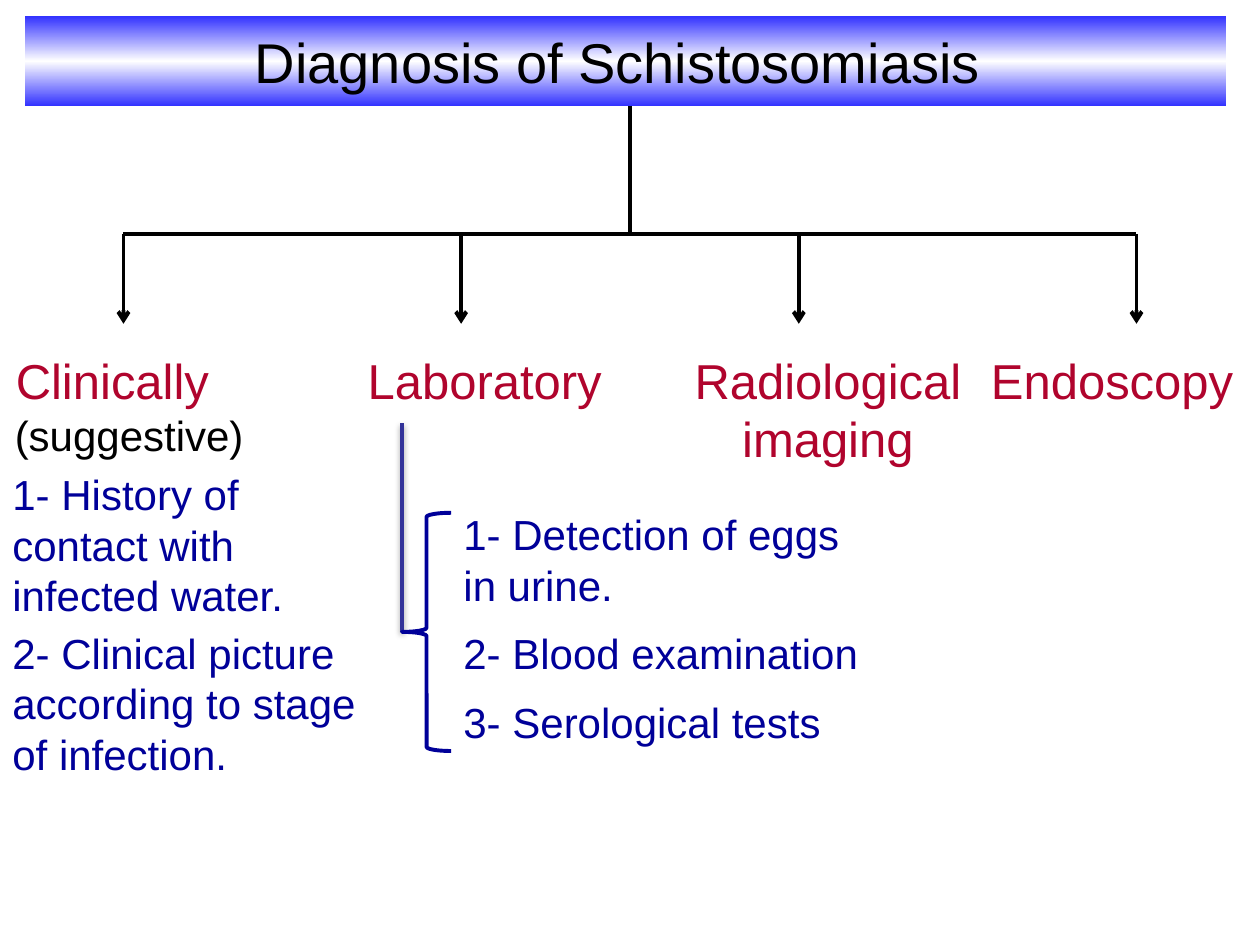
from copy import deepcopy
from dataclasses import dataclass

from pptx import Presentation
from pptx.dml.color import RGBColor
from pptx.enum.shapes import MSO_CONNECTOR, MSO_SHAPE
from pptx.enum.text import MSO_ANCHOR, MSO_AUTO_SIZE, PP_ALIGN
from pptx.oxml import parse_xml
from pptx.oxml.ns import nsdecls, qn
from pptx.util import Inches, Pt

BLACK = RGBColor(0x00, 0x00, 0x00)
WHITE = RGBColor(0xFF, 0xFF, 0xFF)
BAND_BLUE = RGBColor(0x33, 0x33, 0xFF)
RED = RGBColor(0xB0, 0x04, 0x2D)
NAVY = RGBColor(0x00, 0x00, 0x99)
INDIGO = RGBColor(0x33, 0x33, 0x99)

HEADING = {"size": Pt(28), "color": RED, "align": PP_ALIGN.CENTER}
NOTE = {"size": Pt(24), "color": BLACK, "align": PP_ALIGN.CENTER}
DETAIL = {"size": Pt(24), "color": NAVY, "align": PP_ALIGN.LEFT}

TRUNK_X, TITLE_BOTTOM, BAR_Y, ARROW_Y = 5, 0.84, 1.86, 2.57
BRANCH_XS = (0.98, 3.66, 6.34, 9.02)
HEADING_Y, TESTS_X, TESTS_W = 2.73, 3.58, 3.47
BRACE_X, BRACE_Y, BRACE_H = 3.19, 4.07, 1.89

SHADOW = (
    f'<a:effectLst {nsdecls("a")}>'
    '<a:outerShdw blurRad="40000" dist="20000" dir="5400000" rotWithShape="0">'
    '<a:srgbClr val="000000"><a:alpha val="38000"/></a:srgbClr>'
    "</a:outerShdw></a:effectLst>"
)
NO_EFFECT = f'<a:effectLst {nsdecls("a")}/>'
ARROWHEAD = f'<a:tailEnd {nsdecls("a")} type="arrow"/>'


@dataclass(frozen=True)
class Label:
    text: str
    left: float
    top: float
    width: float
    height: float
    style: dict


LABELS = (
    Label("Clinically ", 0, HEADING_Y, 1.89, 0.57, HEADING),
    Label("Laboratory ", 2.64, HEADING_Y, 2.52, 0.57, HEADING),
    Label("Radiological imaging", 5.31, HEADING_Y, 2.52, 1.04, HEADING),
    Label("Endoscopy ", 7.76, HEADING_Y, 2.24, 0.57, HEADING),
    Label("(suggestive)", 0, 3.2, 2.05, 0.51, NOTE),
    Label("1- History of contact with infected water.", 0, 3.67, 2.36, 1.31, DETAIL),
    Label("2- Clinical picture according to stage of infection.",
          0, 4.93, 2.95, 1.31, DETAIL),
    Label("1- Detection of eggs in urine.", TESTS_X, 3.99, TESTS_W, 0.91, DETAIL),
    Label("2- Blood examination", TESTS_X, 4.93, TESTS_W, 0.51, DETAIL),
    Label("3- Serological tests", TESTS_X, 5.48, TESTS_W, 0.51, DETAIL),
)


def write_text(tf, text: str, size: Pt, color: RGBColor, align: PP_ALIGN) -> None:
    tf.word_wrap = True
    p = tf.paragraphs[0]
    p.alignment = align
    r = p.add_run()
    r.text = text
    for name, value in {"name": "Arial", "size": size}.items():
        setattr(r.font, name, value)
    r.font.color.rgb = color


def format_title(sp, text: str) -> None:
    """Turn the title placeholder into a band fading to white in the middle."""
    box = {"left": 0.2, "top": 0.13, "width": 9.53, "height": 0.71}
    for name, value in box.items():
        setattr(sp, name, Inches(value))
    sp.fill.gradient()
    sp.fill.gradient_angle = 90
    stops = sp.element.spPr.find(f".//{qn('a:gsLst')}")
    stops.insert(1, deepcopy(stops[0]))
    colors = (BAND_BLUE, WHITE, BAND_BLUE)
    for stop, position, color in zip(sp.fill.gradient_stops, (0, 0.5, 1), colors):
        stop.position = position
        stop.color.rgb = color
    write_text(sp.text_frame, text, Pt(32), BLACK, PP_ALIGN.CENTER)
    sp.text_frame.vertical_anchor = MSO_ANCHOR.MIDDLE


def add_label(slide, label: Label) -> None:
    sp = slide.shapes.add_textbox(Inches(label.left), Inches(label.top),
                                  Inches(label.width), Inches(label.height))
    write_text(sp.text_frame, label.text, **label.style)
    sp.text_frame.auto_size = MSO_AUTO_SIZE.SHAPE_TO_FIT_TEXT


def add_line(slide, x1: float, y1: float, x2: float, y2: float,
             color: RGBColor = BLACK, width: float = 2.25,
             arrow: bool = False, effect: str = NO_EFFECT) -> None:
    line = slide.shapes.add_connector(MSO_CONNECTOR.STRAIGHT, Inches(x1), Inches(y1),
                                      Inches(x2), Inches(y2))
    line.line.color.rgb = color
    line.line.width = Pt(width)
    spPr = line.element.spPr
    if arrow:
        spPr.find(qn("a:ln")).append(parse_xml(ARROWHEAD))
    spPr.append(parse_xml(effect))


def add_brace(slide) -> None:
    sp = slide.shapes.add_shape(MSO_SHAPE.LEFT_BRACE, Inches(BRACE_X), Inches(BRACE_Y),
                                Inches(TESTS_X - BRACE_X), Inches(BRACE_H))
    sp.shadow.inherit = False
    sp.fill.background()
    sp.line.color.rgb = NAVY
    sp.line.width = Pt(2.25)


def main() -> None:
    prs = Presentation()
    prs.slide_width, prs.slide_height = Inches(10), Inches(7.5)
    slide = prs.slides.add_slide(prs.slide_layouts[5])

    format_title(slide.shapes.title, "Diagnosis of Schistosomiasis ")
    add_line(slide, TRUNK_X, TITLE_BOTTOM, TRUNK_X, BAR_Y)
    add_line(slide, BRANCH_XS[0], BAR_Y, BRANCH_XS[-1], BAR_Y)
    for x in BRANCH_XS:
        add_line(slide, x, BAR_Y, x, ARROW_Y, arrow=True)
    for label in LABELS:
        add_label(slide, label)
    add_line(slide, BRACE_X, 3.36, BRACE_X, BRACE_Y + BRACE_H / 2,
             color=INDIGO, width=2, effect=SHADOW)
    add_brace(slide)

    prs.save("out.pptx")


if __name__ == "__main__":
    main()
